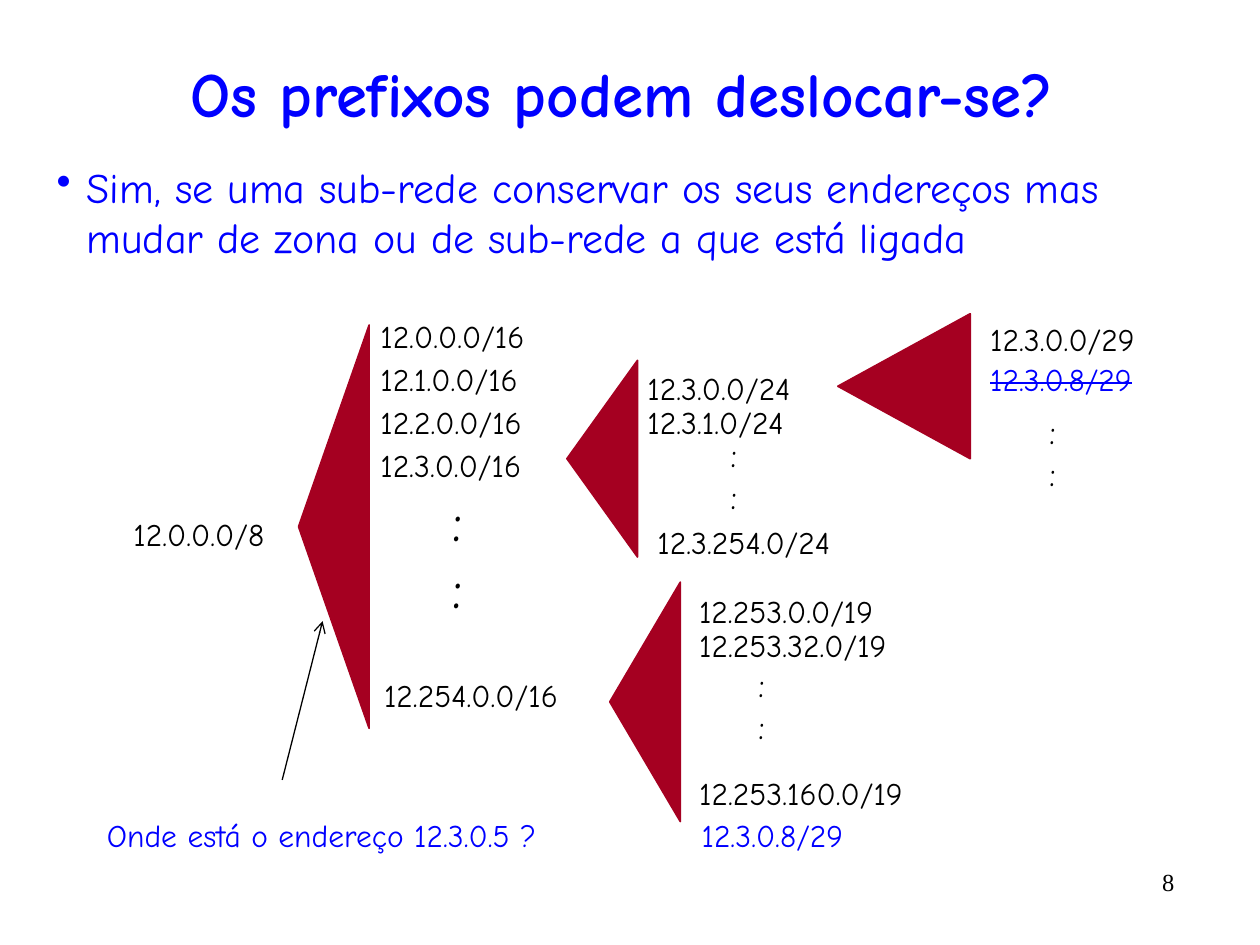
from dataclasses import dataclass

from lxml.etree import SubElement
from pptx import Presentation
from pptx.dml.color import RGBColor
from pptx.enum.shapes import MSO_CONNECTOR as Connector, MSO_SHAPE as Shape
from pptx.enum.text import MSO_ANCHOR as Anchor, MSO_AUTO_SIZE as AutoSize, PP_ALIGN as Align
from pptx.oxml.ns import qn
from pptx.util import Inches, Pt

BLUE = RGBColor(0x00, 0x00, 0xFF)
BLACK = RGBColor(0x00, 0x00, 0x00)
RED = RGBColor(0xA5, 0x00, 0x21)
FONT = "Comic Neue"

COLUMNS, ROWS = 100, 75
CELL = Inches(0.1)


def cells(count: float) -> int:
    return round(count * CELL)


@dataclass
class Label:
    """Text placed on the grid; without wrapping unless asked for."""
    text: str
    left: float
    top: float
    width: float
    height: float = 4
    size: int = 18
    color: RGBColor = BLACK
    font: str = FONT
    bold: bool = False
    strike: bool = False
    wrap: bool = False
    align: Align = Align.LEFT
    anchor: Anchor = Anchor.TOP


@dataclass
class Fan:
    """Triangle whose tip points left, towards the prefix it splits."""
    left: float
    top: float
    width: float
    height: float


def address_list(left: float, top: float, step: float, entries: list[tuple[str, float]]) -> list[Label]:
    return [Label(text, left, top + row * step, width) for row, (text, width) in enumerate(entries)]


def small_dots(left: float, top: float) -> Label:
    return Label(":\n:", left, top, 2.9, 7.7, size=20)


TITLE = Label("Os prefixos podem deslocar-se?", 3.5, 3.6, 91.7, 7.5, size=36, color=BLUE,
              bold=True, wrap=True, align=Align.CENTER, anchor=Anchor.MIDDLE)
ANSWER = Label("Sim, se uma sub-rede conservar os seus endereços mas mudar de zona "
               "ou de sub-rede a que está ligada", 3.5, 12.3, 94.2, 18.7,
               size=24, color=BLUE, wrap=True)
PAGE_NUMBER = Label("8", 84.2, 68.3, 10, 4.2, size=14, font="Times New Roman",
                    wrap=True, align=Align.RIGHT)

FANS = [
    Fan(23.7, 25.8, 5.6, 32),
    Fan(45, 28.6, 5.6, 15.6),
    Fan(48.4, 46.2, 5.6, 19),
    Fan(66.5, 24.9, 10.5, 11.5),
]

PREFIXES = [
    Label("12.0.0.0/8", 9.6, 40.4, 14.1),
    *address_list(29.2, 24.7, 3.4, [("12.0.0.0/16", 15.2), ("12.1.0.0/16", 14.8),
                                    ("12.2.0.0/16", 15.2), ("12.3.0.0/16", 15.2)]),
    Label(":\n:", 34.9, 38, 3.4, 11.8, size=32),
    Label("12.254.0.0/16", 29.5, 53.2, 18.3),
    *address_list(50.4, 28.8, 2.7, [("12.3.0.0/24", 15.6), ("12.3.1.0/24", 15.2)]),
    small_dots(57, 33.8),
    Label("12.3.254.0/24", 51.2, 41, 18.7),
    *address_list(54.5, 46.5, 2.7, [("12.253.0.0/19", 18.3), ("12.253.32.0/19", 19.8)]),
    small_dots(59.2, 52.1),
    Label("12.253.160.0/19", 54.5, 60.9, 20.9),
    Label("12.3.0.0/29", 77.6, 24.9, 15.6),
    Label("12.3.0.8/29", 77.6, 28.1, 15.6, color=BLUE, strike=True),
    small_dots(82.3, 32),
    Label("12.3.0.8/29", 54.7, 64.3, 15.6, color=BLUE),
    Label("Onde está o endereço 12.3.0.5 ?", 7.5, 64.3, 39.7, color=BLUE),
]


def add_label(page, label: Label):
    box = page.shapes.add_textbox(*map(cells, (label.left, label.top, label.width, label.height)))
    frame = box.text_frame
    frame.text = label.text
    frame.word_wrap = label.wrap
    frame.auto_size = AutoSize.NONE if label.wrap else AutoSize.SHAPE_TO_FIT_TEXT
    frame.vertical_anchor = label.anchor
    for para in frame.paragraphs:
        para.alignment = label.align
        for span in para.runs:
            span.font.name = label.font
            span.font.size = Pt(label.size)
            span.font.bold = label.bold
            span.font.color.rgb = label.color
            if label.strike:
                span.font._element.set("strike", "sngStrike")
    return box


def add_bullet(para, indent: float) -> None:
    properties = para._p.get_or_add_pPr()
    properties.set("marL", str(cells(indent)))
    properties.set("indent", str(-cells(indent)))
    SubElement(properties, qn("a:buChar")).set("char", "•")


def add_fan(page, fan: Fan) -> None:
    """Place an upright triangle so that a quarter turn fills the fan's area."""
    left = fan.left + (fan.width - fan.height) / 2
    top = fan.top + (fan.height - fan.width) / 2
    triangle = page.shapes.add_shape(Shape.ISOSCELES_TRIANGLE,
                                     *map(cells, (left, top, fan.height, fan.width)))
    triangle.rotation = 270
    triangle.shadow.inherit = False
    triangle.fill.solid()
    triangle.fill.fore_color.rgb = RED
    triangle.line.color.rgb = RED
    triangle.line.width = Pt(1)


def add_arrow(page, start: tuple[float, float], end: tuple[float, float]) -> None:
    arrow = page.shapes.add_connector(Connector.STRAIGHT, *map(cells, start + end))
    arrow.line.color.rgb = BLACK
    arrow.line.width = Pt(0.75)
    SubElement(arrow.line._get_or_add_ln(), qn("a:tailEnd")).set("type", "arrow")
    SubElement(arrow._element.spPr, qn("a:effectLst"))


def main() -> None:
    deck = Presentation()
    deck.slide_width, deck.slide_height = cells(COLUMNS), cells(ROWS)
    page = deck.slides.add_slide(deck.slide_layouts[6])
    add_label(page, TITLE)
    add_bullet(add_label(page, ANSWER).text_frame.paragraphs[0], 2.4)
    add_label(page, PAGE_NUMBER)
    for fan in FANS:
        add_fan(page, fan)
    for prefix in PREFIXES:
        add_label(page, prefix)
    add_arrow(page, (22.4, 61.9), (25.6, 49.3))
    deck.save("out.pptx")


if __name__ == "__main__":
    main()
